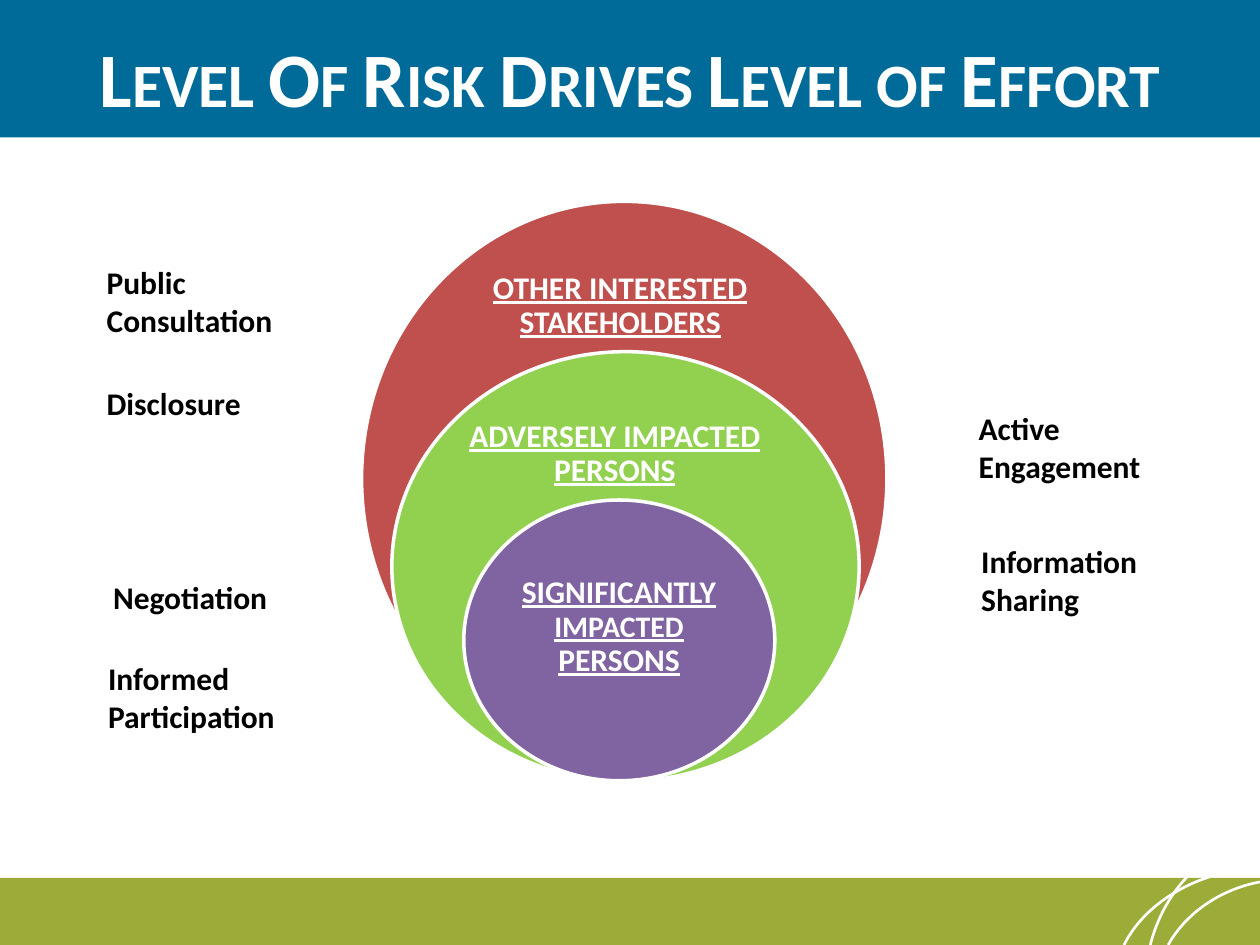
from dataclasses import dataclass

from pptx import Presentation
from pptx.dml.color import RGBColor
from pptx.enum.shapes import MSO_SHAPE
from pptx.enum.text import MSO_ANCHOR, MSO_AUTO_SIZE, PP_ALIGN
from pptx.util import Cm, Pt

COLORS = {
    "white": "FFFFFF",
    "black": "000000",
    "header": "006B98",
    "footer": "9DAC39",
    "interested": "C0504D",
    "adverse": "92D050",
    "significant": "8064A2",
}
FONT = "Calibri"


@dataclass
class Area:
    left: float
    top: float
    width: float
    height: float

    def lengths(self) -> tuple:
        return Cm(self.left), Cm(self.top), Cm(self.width), Cm(self.height)


@dataclass
class Label:
    text: str
    area: Area


@dataclass
class Ring:
    color: str
    area: Area
    spans: list
    text_area: Area
    side_inset: float = 0.2
    anchor: MSO_ANCHOR = MSO_ANCHOR.TOP


LABELS = [
    Label("Public Consultation", Area(1.9, 5.18, 4.62, 1.8)),
    Label("Disclosure", Area(1.9, 7.62, 4.24, 1.02)),
    Label("Negotiation", Area(2.03, 11.53, 4.39, 1.02)),
    Label("Informed Participation", Area(1.93, 13.16, 5.44, 1.8)),
    Label("Active Engagement", Area(19.48, 8.13, 4.39, 1.8)),
    Label("Information Sharing", Area(19.53, 10.8, 4.39, 1.8)),
]

RINGS = [
    Ring("interested", Area(7.29, 4.06, 10.59, 11.18),
         [("OTHER INTERESTED STAKEHOLDERS", 18)],
         Area(8.76, 5.38, 7.49, 5.59)),
    Ring("adverse", Area(7.9, 7.09, 9.42, 8.66),
         [("ADVERSELY IMPACTED PERSONS", 18)],
         Area(9.07, 7.29, 6.65, 3.73), anchor=MSO_ANCHOR.MIDDLE),
    Ring("significant", Area(9.35, 10.08, 6.27, 5.66),
         [("SIGNIFICANTLY ", 18), ("IMPACTED", 17), (" PERSONS", 18)],
         Area(10.08, 11.51, 4.8, 2.84), side_inset=0.36),
]

ARCS = [
    [(24.38, 17.68), (23.6, 17.93), (22.96, 18.44), (22.66, 19.05)],
    [(25.4, 17.78), (24.59, 17.93), (23.9, 18.42), (23.55, 19.05)],
    [(23.93, 17.68), (23.57, 18.06), (23.32, 18.54), (23.19, 19.05)],
]


def color(name: str) -> RGBColor:
    return RGBColor.from_string(COLORS[name])


def style_font(font, size: float, name: str) -> None:
    font.name = FONT
    font.size = Pt(size)
    font.bold = True
    font.color.rgb = color(name)


def add_solid(page, kind: MSO_SHAPE, area: Area, fill: str, line: float = 0) -> None:
    shape = page.shapes.add_shape(kind, *area.lengths())
    shape.shadow.inherit = False
    shape.fill.solid()
    shape.fill.fore_color.rgb = color(fill)
    if line:
        shape.line.color.rgb = color("white")
        shape.line.width = Pt(line)
    else:
        shape.line.fill.background()


def bezier_point(controls: list, t: float) -> tuple:
    weights = ((1 - t) ** 3, 3 * t * (1 - t) ** 2, 3 * t ** 2 * (1 - t), t ** 3)
    return tuple(
        Cm(sum(weight * point[axis] for weight, point in zip(weights, controls)))
        for axis in (0, 1)
    )


def add_arc(page, controls: list, steps: int = 24) -> None:
    points = [bezier_point(controls, step / steps) for step in range(steps + 1)]
    builder = page.shapes.build_freeform(*points[0])
    builder.add_line_segments(points[1:], close=False)
    arc = builder.convert_to_shape()
    arc.shadow.inherit = False
    arc.fill.background()
    arc.line.color.rgb = color("white")
    arc.line.width = Pt(1.5)


def add_title(page, text: str) -> None:
    title = page.shapes.title
    title.left, title.top, title.width, title.height = Area(0, 0.48, 25.4, 2.29).lengths()
    frame = title.text_frame
    frame.text = text
    frame.word_wrap = True
    frame.auto_size = MSO_AUTO_SIZE.NONE
    frame.vertical_anchor = MSO_ANCHOR.TOP
    para = frame.paragraphs[0]
    para.alignment = PP_ALIGN.CENTER
    style_font(para.font, 44, "white")
    para.runs[0].font._element.set("cap", "small")


def add_label(page, label: Label) -> None:
    frame = page.shapes.add_textbox(*label.area.lengths()).text_frame
    frame.word_wrap = True
    frame.text = label.text
    style_font(frame.paragraphs[0].font, 18, "black")


def add_ring(page, ring: Ring) -> None:
    add_solid(page, MSO_SHAPE.OVAL, ring.area, ring.color, line=2)
    frame = page.shapes.add_textbox(*ring.text_area.lengths()).text_frame
    frame.word_wrap = True
    frame.vertical_anchor = ring.anchor
    frame.margin_left = frame.margin_right = Cm(ring.side_inset)
    frame.margin_top = frame.margin_bottom = Cm(0.1)
    para = frame.paragraphs[0]
    para.alignment = PP_ALIGN.CENTER
    para.line_spacing = 0.9
    style_font(para.font, 18, "white")
    para.font.underline = True
    for text, size in ring.spans:
        span = para.add_run()
        span.text = text
        if size != 18:
            span.font.size = Pt(size)


def main() -> None:
    deck = Presentation()
    deck.slide_width, deck.slide_height = Cm(25.4), Cm(19.05)
    page = deck.slides.add_slide(deck.slide_layouts[5])
    add_solid(page, MSO_SHAPE.RECTANGLE, Area(0, 17.7, 25.4, 1.35), "footer")
    add_solid(page, MSO_SHAPE.RECTANGLE, Area(0, 0, 25.4, 2.77), "header")
    for controls in ARCS:
        add_arc(page, controls)
    add_title(page, "Level Of Risk Drives Level of Effort")
    title = page.shapes.title._element
    title.getparent().append(title)
    for label in LABELS:
        add_label(page, label)
    for ring in RINGS:
        add_ring(page, ring)
    deck.save("out.pptx")


if __name__ == "__main__":
    main()
